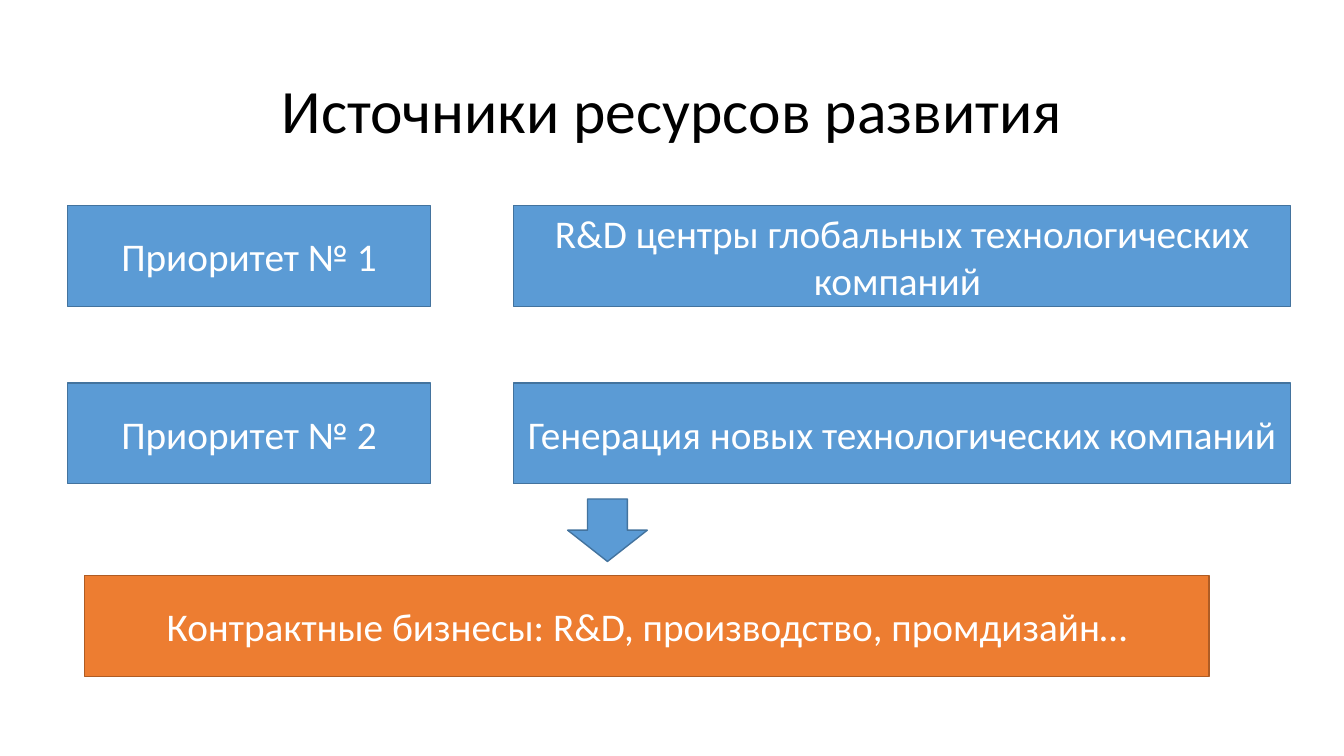
import pptx
import pptx.util
import pptx.dml.color
import pptx.enum.shapes
import pptx.enum.text

Inches = pptx.util.Inches
Pt = pptx.util.Pt
RGBColor = pptx.dml.color.RGBColor
Shape = pptx.enum.shapes.MSO_SHAPE

BLACK = RGBColor(0x00, 0x00, 0x00)
WHITE = RGBColor(0xFF, 0xFF, 0xFF)
BLUE = RGBColor(0x5B, 0x9B, 0xD5)
NAVY = RGBColor(0x43, 0x73, 0x9E)
ORANGE = RGBColor(0xED, 0x7D, 0x31)
RUST = RGBColor(0xAF, 0x5C, 0x24)


class Painter:
    font = "Calibri"

    def __init__(self, slide):
        self.slide = slide

    def label(self, shape, text, size, color):
        frame = shape.text_frame
        frame.word_wrap = True
        frame.vertical_anchor = pptx.enum.text.MSO_ANCHOR.MIDDLE
        line = frame.paragraphs[0]
        line.text = text
        line.alignment = pptx.enum.text.PP_ALIGN.CENTER
        line.font.name = self.font
        line.font.size = Pt(size)
        line.font.color.rgb = color
        return line

    def title(self, text, left, top, width, height):
        box = self.slide.shapes.add_textbox(
            Inches(left), Inches(top), Inches(width), Inches(height))
        self.label(box, text, 44, BLACK).line_spacing = 0.9

    def shape(self, kind, left, top, width, height, fill=BLUE, edge=NAVY):
        shape = self.slide.shapes.add_shape(
            kind, Inches(left), Inches(top), Inches(width), Inches(height))
        shape.shadow.inherit = False
        shape.fill.solid()
        shape.fill.fore_color.rgb = fill
        shape.line.color.rgb = edge
        shape.line.width = Pt(1)
        return shape

    def block(self, text, left, top, width, fill=BLUE, edge=NAVY):
        shape = self.shape(Shape.RECTANGLE, left, top, width, 1, fill, edge)
        self.label(shape, text, 28, WHITE)

    def arrow(self, left, top, width, height):
        self.shape(Shape.DOWN_ARROW, left, top, width, height)


def main():
    deck = pptx.Presentation()
    deck.slide_width = Inches(13.33)
    deck.slide_height = Inches(7.5)
    paint = Painter(deck.slides.add_slide(deck.slide_layouts[6]))

    paint.title("Источники ресурсов развития", 0.92, 0.4, 11.5, 1.45)
    goals = [
        "R&D центры глобальных технологических компаний ",
        "Генерация новых технологических компаний",
    ]
    for index, goal in enumerate(goals):
        top = 2.04 + 1.76 * index
        paint.block(f"Приоритет № {index + 1}", 0.67, top, 3.6)
        paint.block(goal, 5.09, top, 7.71)
    paint.block("Контрактные бизнесы: R&D, производство, промдизайн…",
                0.84, 5.71, 11.15, ORANGE, RUST)
    paint.arrow(5.63, 4.95, 0.79, 0.62)
    deck.save("out.pptx")


if __name__ == "__main__":
    main()
